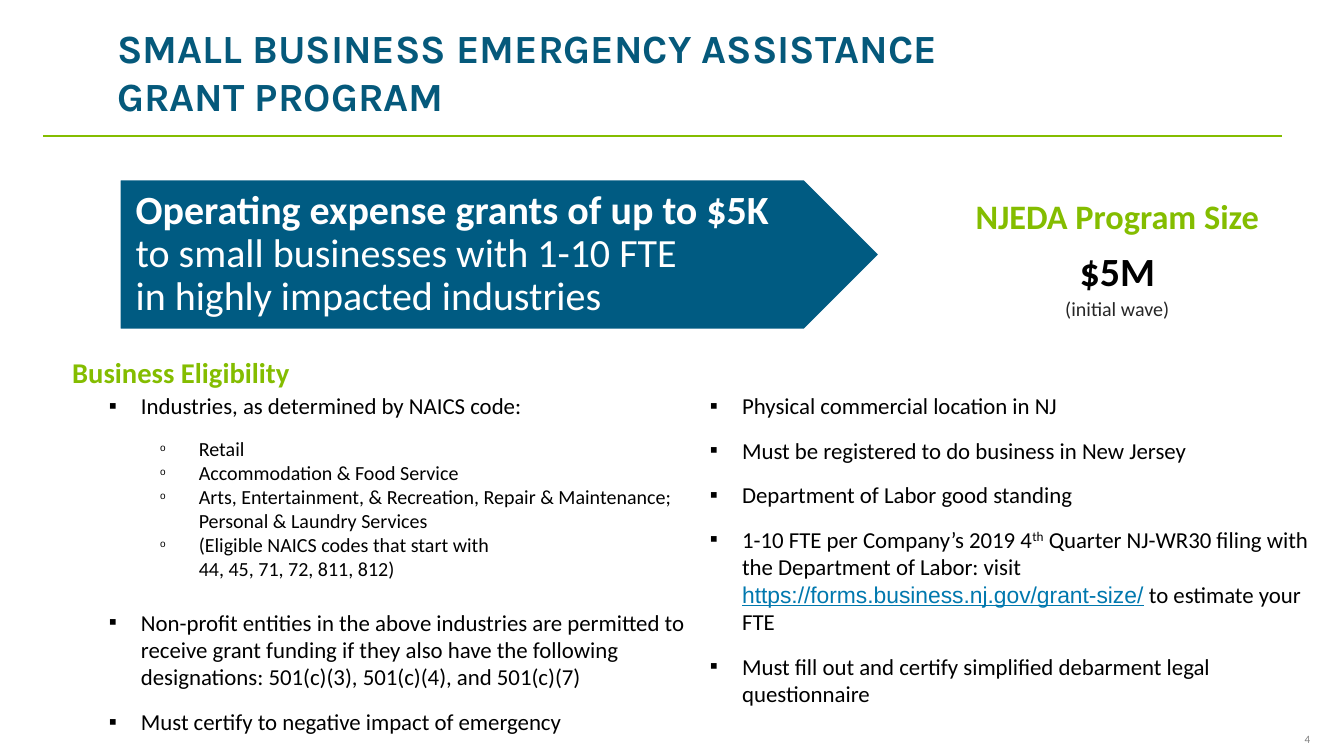
from dataclasses import dataclass

from lxml import etree
from pptx import Presentation
from pptx.dml.color import RGBColor
from pptx.enum.shapes import MSO_CONNECTOR, MSO_SHAPE
from pptx.enum.text import MSO_ANCHOR, PP_ALIGN
from pptx.oxml.ns import qn
from pptx.util import Pt

LEFT, CENTER, RIGHT = PP_ALIGN.LEFT, PP_ALIGN.CENTER, PP_ALIGN.RIGHT
TOP, MIDDLE = MSO_ANCHOR.TOP, MSO_ANCHOR.MIDDLE
STRAIGHT = MSO_CONNECTOR.STRAIGHT
PENTAGON = MSO_SHAPE.PENTAGON


@dataclass(frozen=True)
class Theme:
    title_font: str = "Karla"
    body_font: str = "Calibri"
    link_font: str = "Arial"
    navy: str = "005B82"
    title_blue: str = "05597B"
    green: str = "84BD00"
    link: str = "0078AE"
    black: str = "000000"
    dark: str = "262626"
    gray: str = "808080"
    white: str = "FFFFFF"
    display: float = 28
    program: float = 24
    heading: float = 20
    body: float = 16
    small: float = 14
    number: float = 7.8


T = Theme()


@dataclass(frozen=True)
class Run:
    text: str
    size: float = T.body
    color: str = T.black
    bold: bool = False
    font: str = T.body_font
    underline: bool = False
    baseline: int = 0


@dataclass(frozen=True)
class Bullet:
    char: str
    margin: float
    hanging: float
    percent: int = 100


@dataclass(frozen=True)
class Para:
    runs: tuple[Run, ...]
    align: PP_ALIGN = LEFT
    after: float = 0
    spacing: float = 1
    bullet: Bullet | None = None


@dataclass(frozen=True)
class Box:
    left: float
    top: float
    width: float
    height: float

    def emu(self) -> tuple[Pt, ...]:
        return Pt(self.left), Pt(self.top), Pt(self.width), Pt(self.height)


SQUARE = Bullet("▪", 22.5, 22.5)
RING = Bullet("o", 63, 27, 50)


def point(*runs: Run) -> Para:
    return Para(runs, after=12, bullet=SQUARE)


def subpoint(text: str, after: float = 0) -> Para:
    return Para((Run(text, T.small),), after=after, bullet=RING)


CRITERIA = [
    point(Run("Industries, as determined by NAICS code:")),
    subpoint("Retail"),
    subpoint("Accommodation & Food Service"),
    subpoint("Arts, Entertainment, & Recreation, Repair & Maintenance; Personal & Laundry Services"),
    subpoint("(Eligible NAICS codes that start with\n44, 45, 71, 72, 811, 812)", 19.5),
    point(Run("Non-profit entities in the above industries are permitted to receive grant funding "
              "if they also have the following designations: 501(c)(3), 501(c)(4), and 501(c)(7)")),
    point(Run("Must certify to negative impact of emergency")),
    point(Run("Physical commercial location in NJ")),
    point(Run("Must be registered to do business in New Jersey")),
    point(Run("Department of Labor good standing")),
    point(Run("1-10 FTE per Company’s 2019 4"), Run("th", baseline=30000),
          Run(" Quarter NJ-WR30 filing with the Department of Labor: visit "),
          Run("https://forms.business.nj.gov/grant-size/", color=T.link, font=T.link_font,
              underline=True),
          Run(" to estimate your FTE")),
    point(Run("Must fill out and certify simplified debarment legal questionnaire")),
]


def add_bullet(p, bullet: Bullet) -> None:
    """Give a paragraph a hanging bullet."""
    ppr = p._p.get_or_add_pPr()
    ppr.set("marL", str(Pt(bullet.margin)))
    ppr.set("indent", str(-Pt(bullet.hanging)))
    etree.SubElement(ppr, qn("a:buSzPct"), val=str(bullet.percent * 1000))
    etree.SubElement(ppr, qn("a:buFont"), typeface=T.link_font)
    etree.SubElement(ppr, qn("a:buChar"), char=bullet.char)


def add_run(p, run: Run) -> None:
    """Append a styled run, turning newlines into line breaks."""
    for i, part in enumerate(run.text.split("\n")):
        if i:
            p.add_line_break()
            etree.SubElement(p._p[-1], qn("a:rPr"), sz=str(int(run.size * 100)))
        r = p.add_run()
        r.text = part
        r.font.name = run.font
        r.font.size = Pt(run.size)
        r.font.bold = run.bold
        r.font.color.rgb = RGBColor.from_string(run.color)
        if run.underline:
            r.font.underline = True
        if run.baseline:
            r.font._element.set("baseline", str(run.baseline))


def write(tf, paras: list[Para]) -> None:
    """Fill a text frame with paragraphs."""
    for i, para in enumerate(paras):
        p = tf.add_paragraph() if i else tf.paragraphs[0]
        p.alignment = para.align
        p.line_spacing = para.spacing
        p.space_after = Pt(para.after)
        if para.bullet:
            add_bullet(p, para.bullet)
        for run in para.runs:
            add_run(p, run)


def add_text(s, box: Box, paras: list[Para], columns: int = 1) -> None:
    """Add a wrapped text box, optionally in columns."""
    tf = s.shapes.add_textbox(*box.emu()).text_frame
    tf.word_wrap = True
    tf.vertical_anchor = TOP
    if columns > 1:
        tf._txBody.bodyPr.set("numCol", str(columns))
    write(tf, paras)


def add_page_number(s, box: Box, text: str) -> None:
    """Add the small page number without margins."""
    tf = s.shapes.add_textbox(*box.emu()).text_frame
    tf.margin_left = tf.margin_right = tf.margin_top = tf.margin_bottom = 0
    tf.vertical_anchor = MIDDLE
    tf.word_wrap = False
    write(tf, [Para((Run(text, T.number, T.gray),), RIGHT)])


def add_banner(s, box: Box, paras: list[Para]) -> None:
    """Add the arrow-shaped banner."""
    sp = s.shapes.add_shape(PENTAGON, *box.emu())
    sp.shadow.inherit = False
    sp.fill.solid()
    sp.fill.fore_color.rgb = RGBColor.from_string(T.navy)
    sp.line.color.rgb = RGBColor.from_string(T.white)
    sp.line.width = Pt(2)
    tf = sp.text_frame
    tf.word_wrap = True
    tf.vertical_anchor = MIDDLE
    tf.margin_left, tf.margin_right = Pt(11.5), Pt(3)
    tf.margin_top = tf.margin_bottom = Pt(5.8)
    write(tf, paras)


def add_rule(s, left: float, right: float, y: float) -> None:
    """Add the line below the title."""
    line = s.shapes.add_connector(STRAIGHT, Pt(left), Pt(y), Pt(right), Pt(y))
    line.line.color.rgb = RGBColor.from_string(T.green)
    line.line.width = Pt(1.5)
    etree.SubElement(line._element.spPr, qn("a:effectLst"))


def add_size_table(s, box: Box, rows: list[tuple[float, list[Para]]]) -> None:
    """Add the one-column program size table."""
    table = s.shapes.add_table(len(rows), 1, *box.emu()).table
    table.first_row = table.horz_banding = False
    for i, (height, paras) in enumerate(rows):
        table.rows[i].height = Pt(height)
        cell = table.cell(i, 0)
        cell.fill.background()
        cell.vertical_anchor = MIDDLE
        write(cell.text_frame, paras)


def main() -> None:
    """Build the grant program slide."""
    prs = Presentation()
    prs.slide_width, prs.slide_height = Pt(941), Pt(529.2)
    s = prs.slides.add_slide(prs.slide_layouts[6])
    add_page_number(s, Box(908, 512.6, 9.4, 9.4), "4")
    add_banner(s, Box(83.5, 125.3, 532.8, 105.8), [Para((
        Run("Operating expense grants of up to $5K\n", T.display, T.white, True),
        Run("to small businesses with 1-10 FTE\nin highly impacted industries", T.display, T.white),
    ), spacing=0.9)])
    add_text(s, Box(75, 13, 652.3, 74.9), [Para((
        Run("SMALL BUSINESS EMERGENCY ASSISTANCE GRANT PROGRAM", T.display, T.title_blue, True,
            T.title_font),))])
    add_text(s, Box(69.1, 270.7, 856, 250.6), CRITERIA, columns=2)
    add_text(s, Box(30.2, 232.6, 193, 39.6), [Para((
        Run("Business Eligibility", T.heading, T.green, True),), CENTER, spacing=1.5)])
    add_rule(s, 30.2, 897.8, 95)
    add_size_table(s, Box(659.5, 134.6, 245.5, 93.6), [
        (36, [Para((Run("NJEDA Program Size", T.program, T.green, True),), CENTER)]),
        (57.6, [Para((Run("$5M", T.display, bold=True),), CENTER),
                Para((Run("(initial wave)", T.small, T.dark),), CENTER)]),
    ])
    prs.save("out.pptx")


if __name__ == "__main__":
    main()
